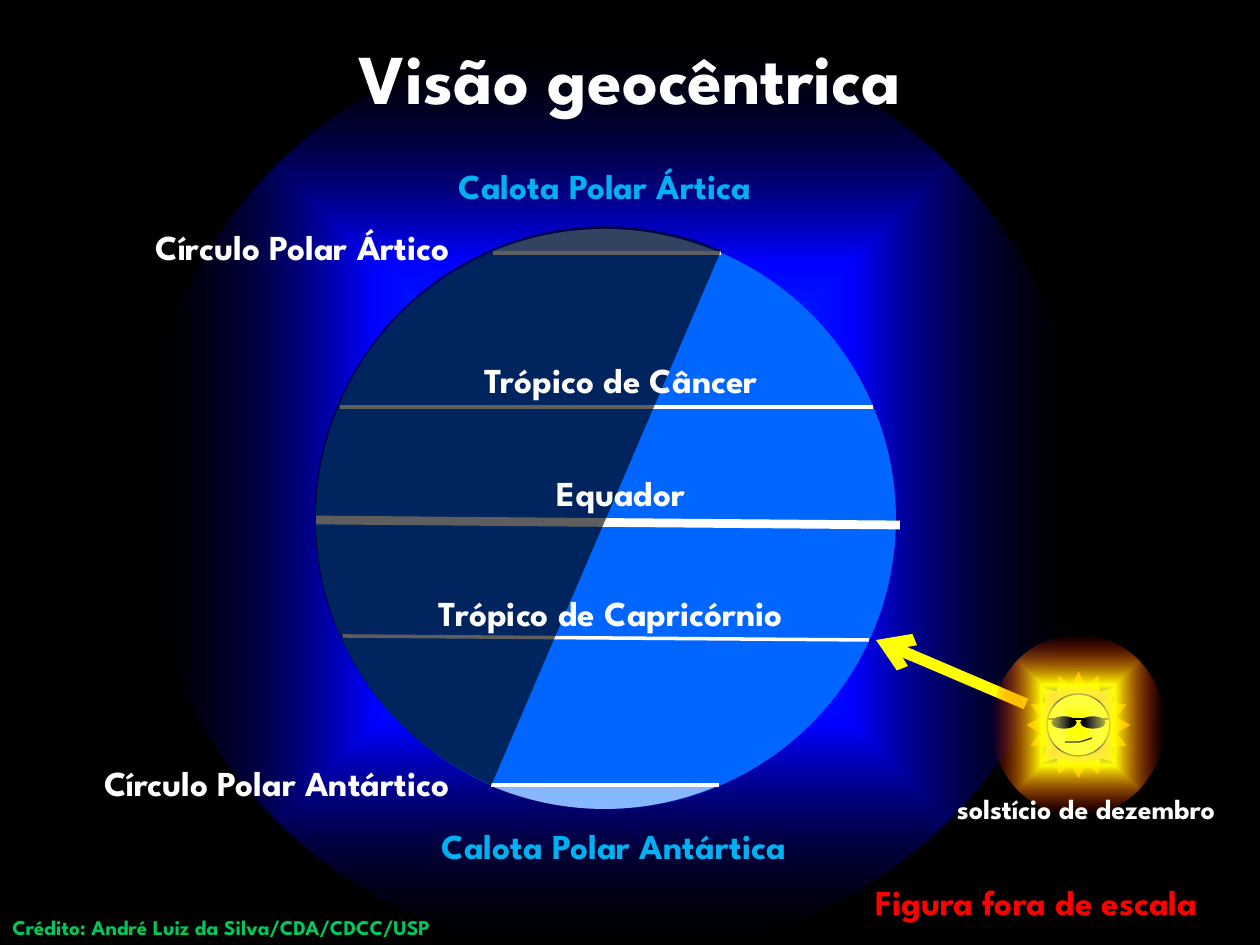
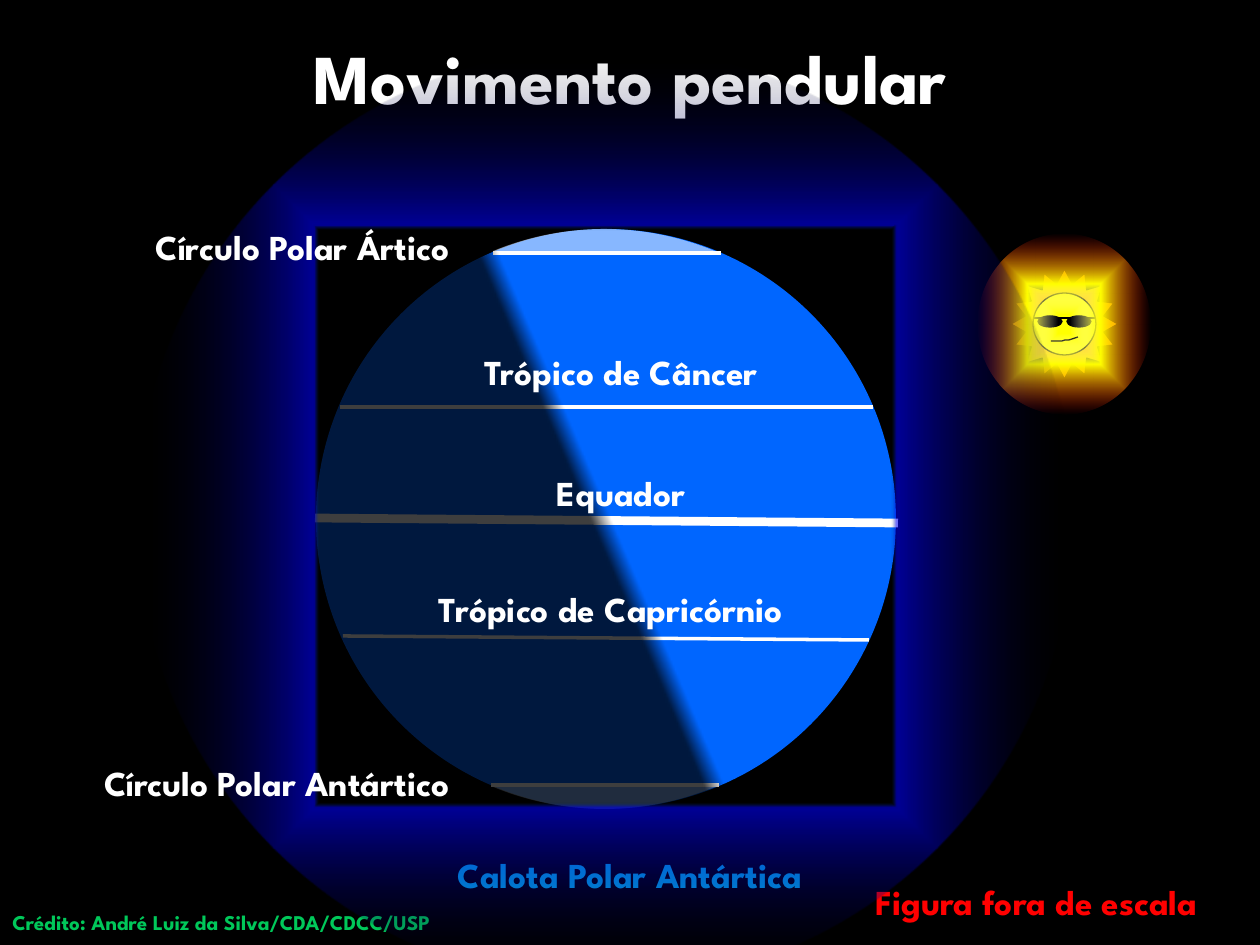
from lxml import etree
from pptx import Presentation
from pptx.dml.color import RGBColor
from pptx.enum.shapes import MSO_CONNECTOR as Connector, MSO_SHAPE as Shape
from pptx.enum.text import MSO_ANCHOR as Anchor, MSO_AUTO_SIZE as AutoSize, PP_ALIGN as Align
from pptx.oxml import parse_xml
from pptx.oxml.ns import nsdecls, qn
from pptx.util import Emu, Pt

EMU_PER_PX = 914400 / 126
PAGE_WIDTH, PAGE_HEIGHT = 1260, 945
FONT = "League Spartan"

BLACK = RGBColor(0x00, 0x00, 0x00)
WHITE = RGBColor(0xFF, 0xFF, 0xFF)
OCEAN = RGBColor(0x00, 0x66, 0xFF)
BLUE = RGBColor(0x00, 0x00, 0xFF)
NAVY = RGBColor(0x00, 0x31, 0x79)
ICE = RGBColor(0x00, 0xB0, 0xF0)
RED = RGBColor(0xFF, 0x00, 0x00)
GREEN = RGBColor(0x00, 0xC8, 0x5A)
YELLOW = RGBColor(0xFF, 0xFF, 0x00)
GOLD = RGBColor(0xFF, 0xC0, 0x00)

# Text styles: size, colour, alignment, box width, box height
STYLES = {
    "title": (40, WHITE, Align.CENTER, 1260, 158),
    "circle": (20, WHITE, Align.CENTER, 554, 55),
    "cap": (20, ICE, Align.CENTER, 446, 55),
    "warning": (20, RED, Align.LEFT, 390, 55),
    "season": (16, WHITE, Align.CENTER, 338, 47),
    "credit": (12, GREEN, Align.LEFT, 760, 38),
}

# Gradient stops: position %, colour, opacity %
OUTER_HALO = [(0, OCEAN, 100), (50, BLUE, 100), (100, BLACK, 5)]
RING_HALO = [(61, NAVY, 0), (62, BLUE, 59), (100, BLACK, 0)]
SUN_GLOW = [(7, WHITE, 0), (42, YELLOW, 100), (100, RED, 0)]
NIGHT_EDGE = [(49, BLACK, 75), (50, BLACK, 0)]

# Lines: x1, y1, x2, y2, width in points
CANCER = ("line", (340, 407, 873, 407, 2))
CAPRICORN = ("line", (343, 636, 869, 640, 2))
ARCTIC = ("line", (493, 253, 721, 253, 2))
ANTARCTIC = ("line", (491, 785, 719, 785, 2))

GLOBE = ("disc", (316, 229, 580, 580), OCEAN)
CAP_BOX = (314, 229, 580, 580)
CAPS = [("chord", CAP_BOX, (40.23, 67.78), 0, WHITE, 53),
        ("chord", CAP_BOX, (40.46, 67.78), 180, WHITE, 53)]
CIRCLE_NAMES = [("text", "circle", "Círculo Polar Ártico", 26, 219),
                ("text", "circle", "Círculo Polar Antártico", 0, 755)]
EQUATOR_NAME = ("text", "circle", "Equador", 344, 465)
WARNING = ("text", "warning", "Figura fora de escala", 863, 874)
CREDIT = "Crédito: André Luiz da Silva/CDA/CDCC/USP"

# Each page lists its parts from back to front
PAGES = [
    [
        ("halo", (140, 28, 945, 931), OUTER_HALO),
        GLOBE,
        ("line", (316, 520, 900, 525, 5)),
        CANCER, CAPRICORN, ARCTIC, ANTARCTIC,
        *CIRCLE_NAMES,
        *CAPS,
        ("text", "cap", "Calota Polar Antártica", 391, 818),
        ("text", "cap", "Calota Polar Ártica", 382, 158),
        ("line", (1026, 704, 876, 640, 6.5), YELLOW, True),
        ("sun", 992, 635),
        ("chord", (315, 226, 580, 582), (53.67, 162.02), 203, BLACK, 63, True),
        ("text", "circle", "Trópico de Câncer", 344, 352),
        ("text", "circle", "Trópico de Capricórnio", 334, 585),
        EQUATOR_NAME,
        ("text", "title", "Visão geocêntrica", 0, -3),
        WARNING,
        ("text", "season", "solstício de dezembro", 917, 785),
        ("text", "credit", CREDIT, 0, 908),
    ],
    [
        GLOBE,
        ARCTIC, ANTARCTIC,
        *CAPS,
        WARNING,
        ("line", (315, 518, 898, 523, 5)),
        CAPRICORN, CANCER,
        ("night", (54, -39, 1116, 1116), 337),
        ("text", "credit", CREDIT, 0, 903),
        ("text", "cap", "Calota Polar Antártica", 407, 847),
        ("text", "circle", "Trópico de Câncer", 344, 344),
        ("text", "circle", "Trópico de Capricórnio", 334, 581),
        EQUATOR_NAME,
        ("text", "title", "Movimento pendular", 0, -3),
        ("sun", 978, 234),
        ("halo", (137, 48, 937, 937), RING_HALO),
        *CIRCLE_NAMES,
    ],
]

# Parts of the sun, measured from the corner of its glow
SUN_DISCS = [
    (Shape.STAR_16_POINT, (33, 35, 107, 110), GOLD),
    (Shape.OVAL, (55, 59, 63, 62), YELLOW),
    (Shape.OVAL, (60, 82, 24, 11), BLACK),
    (Shape.OVAL, (89, 82, 24, 11), BLACK),
]
GLASSES_BAR = (55, 84, 118, 84)
SMILE = [(73, 107), (83, 108), (92, 106), (100, 103)]
SUN_OUTLINE = 0.75


def px(*lengths):
    return [Emu(round(length * EMU_PER_PX)) for length in lengths]


def add_shape(shapes, kind, box, color=None, outline=None):
    shape = shapes.add_shape(kind, *px(*box))
    shape.shadow.inherit = False
    if color is not None:
        shape.fill.solid()
        shape.fill.fore_color.rgb = color
    if outline:
        shape.line.color.rgb = BLACK
        shape.line.width = Pt(outline)
    else:
        shape.line.fill.background()
    return shape


def fill_gradient(shape, stops, direction):
    """Fill with (position, colour, opacity) stops; direction is an XML element."""
    stop_xml = "".join(
        f'<a:gs pos="{position * 1000}"><a:srgbClr val="{color}">'
        f'<a:alpha val="{opacity * 1000}"/></a:srgbClr></a:gs>'
        for position, color, opacity in stops)
    shape.fill.gradient()
    properties = shape._element.spPr
    properties.replace(properties.find(qn("a:gradFill")), parse_xml(
        f'<a:gradFill {nsdecls("a")} rotWithShape="1">'
        f"<a:gsLst>{stop_xml}</a:gsLst>{direction}</a:gradFill>"))


def add_halo(shapes, box, stops):
    halo = add_shape(shapes, Shape.OVAL, box)
    fill_gradient(halo, stops, '<a:path path="shape">'
                  '<a:fillToRect l="50000" t="50000" r="50000" b="50000"/></a:path>')


def add_night(shapes, box, rotation):
    night = add_shape(shapes, Shape.RECTANGLE, box)
    night.rotation = rotation
    fill_gradient(night, NIGHT_EDGE, '<a:lin ang="0" scaled="0"/>')


def add_disc(shapes, box, color):
    add_shape(shapes, Shape.OVAL, box, color)


def add_chord(shapes, box, angles, rotation, color, opacity, flipped=False):
    chord = add_shape(shapes, Shape.CHORD, box, color)
    chord.rotation = rotation
    for index, angle in enumerate(angles):
        chord.adjustments[index] = angle
    properties = chord._element.spPr
    paint = properties.find(qn("a:solidFill")).find(qn("a:srgbClr"))
    etree.SubElement(paint, qn("a:alpha"), val=str(opacity * 1000))
    if flipped:
        properties.find(qn("a:xfrm")).set("flipH", "1")


def add_line(shapes, course, color=WHITE, arrow=False):
    *ends, width = course
    line = shapes.add_connector(Connector.STRAIGHT, *px(*ends))
    line.line.color.rgb = color
    line.line.width = Pt(width)
    properties = line._element.spPr
    if arrow:
        etree.SubElement(properties.find(qn("a:ln")), qn("a:tailEnd"), type="arrow")
    etree.SubElement(properties, qn("a:effectLst"))


def add_text(shapes, style, words, left, top):
    size, color, align, width, height = STYLES[style]
    box = shapes.add_textbox(*px(left, top, width, height))
    frame = box.text_frame
    frame.word_wrap = True
    if style == "title":
        frame.vertical_anchor = Anchor.MIDDLE
    else:
        frame.auto_size = AutoSize.SHAPE_TO_FIT_TEXT
    para = frame.paragraphs[0]
    para.alignment = align
    span = para.add_run()
    span.text = words
    for name, value in {"name": FONT, "size": Pt(size), "bold": True}.items():
        setattr(span.font, name, value)
    span.font.color.rgb = color


def curve_points(controls, steps=8):
    """Points along the cubic Bézier curve with four control points."""
    for step in range(steps + 1):
        t = step / steps
        weights = ((1 - t) ** 3, 3 * t * (1 - t) ** 2, 3 * t ** 2 * (1 - t), t ** 3)
        yield tuple(sum(w * point[axis] for w, point in zip(weights, controls))
                    for axis in (0, 1))


def add_sun(shapes, left, top):
    parts = shapes.add_group_shape().shapes
    for kind, (x, y, width, height), color in SUN_DISCS:
        add_shape(parts, kind, (left + x, top + y, width, height), color, SUN_OUTLINE)
    start, *rest = [(left + x, top + y) for x, y in curve_points(SMILE)]
    builder = parts.build_freeform(*start, scale=EMU_PER_PX)
    builder.add_line_segments(rest, close=False)
    smile = builder.convert_to_shape()
    smile.shadow.inherit = False
    smile.fill.background()
    smile.line.color.rgb = BLACK
    smile.line.width = Pt(SUN_OUTLINE)
    x1, y1, x2, y2 = GLASSES_BAR
    add_line(parts, (left + x1, top + y1, left + x2, top + y2, SUN_OUTLINE), BLACK)
    add_halo(parts, (left, top, 173, 180), SUN_GLOW)


DRAW = {"halo": add_halo, "night": add_night, "disc": add_disc, "chord": add_chord,
        "line": add_line, "text": add_text, "sun": add_sun}


def main():
    deck = Presentation()
    deck.slide_width, deck.slide_height = px(PAGE_WIDTH, PAGE_HEIGHT)
    for parts in PAGES:
        page = deck.slides.add_slide(deck.slide_layouts[6])
        page.background.fill.solid()
        page.background.fill.fore_color.rgb = BLACK
        for kind, *details in parts:
            DRAW[kind](page.shapes, *details)
    deck.save("out.pptx")


if __name__ == "__main__":
    main()
